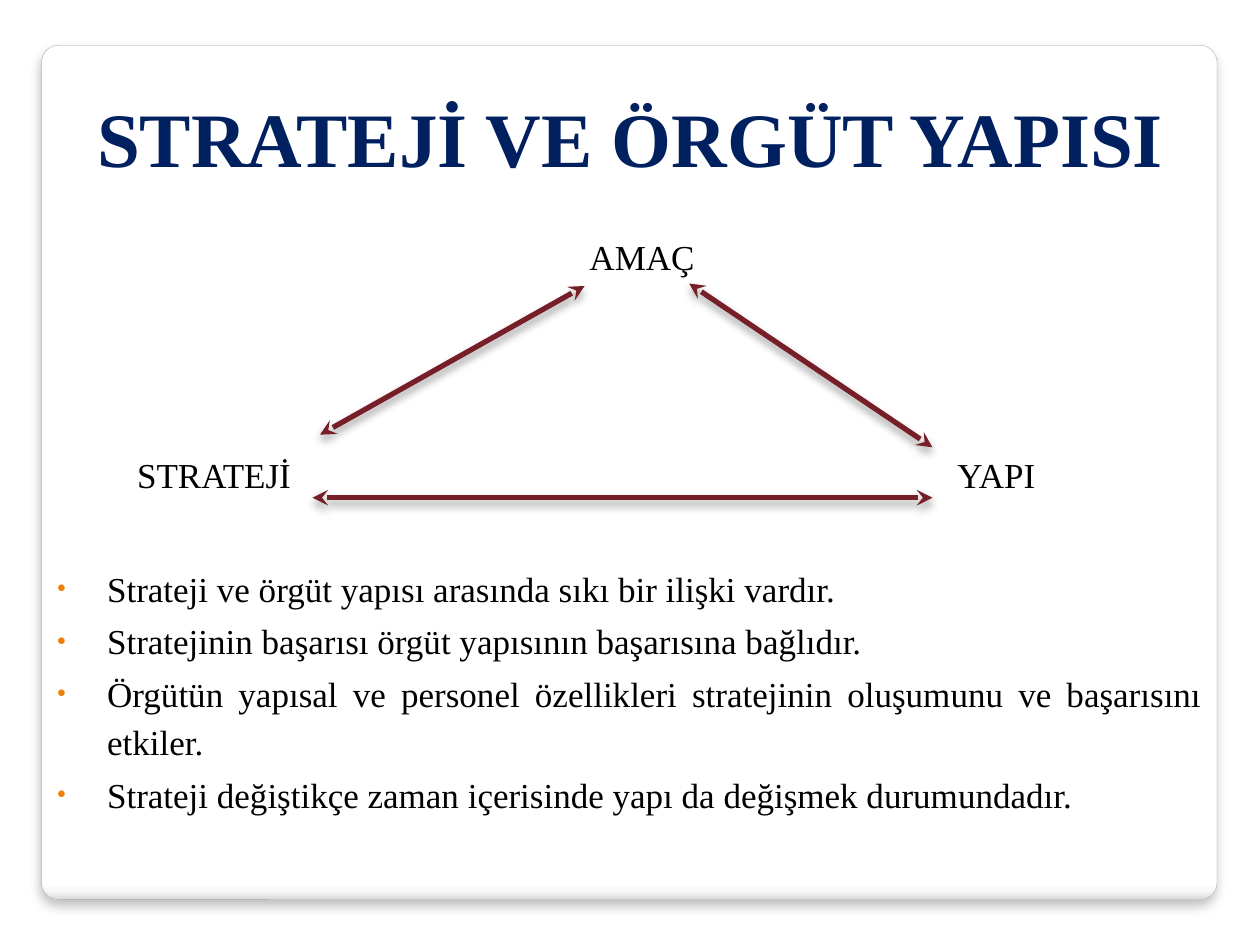
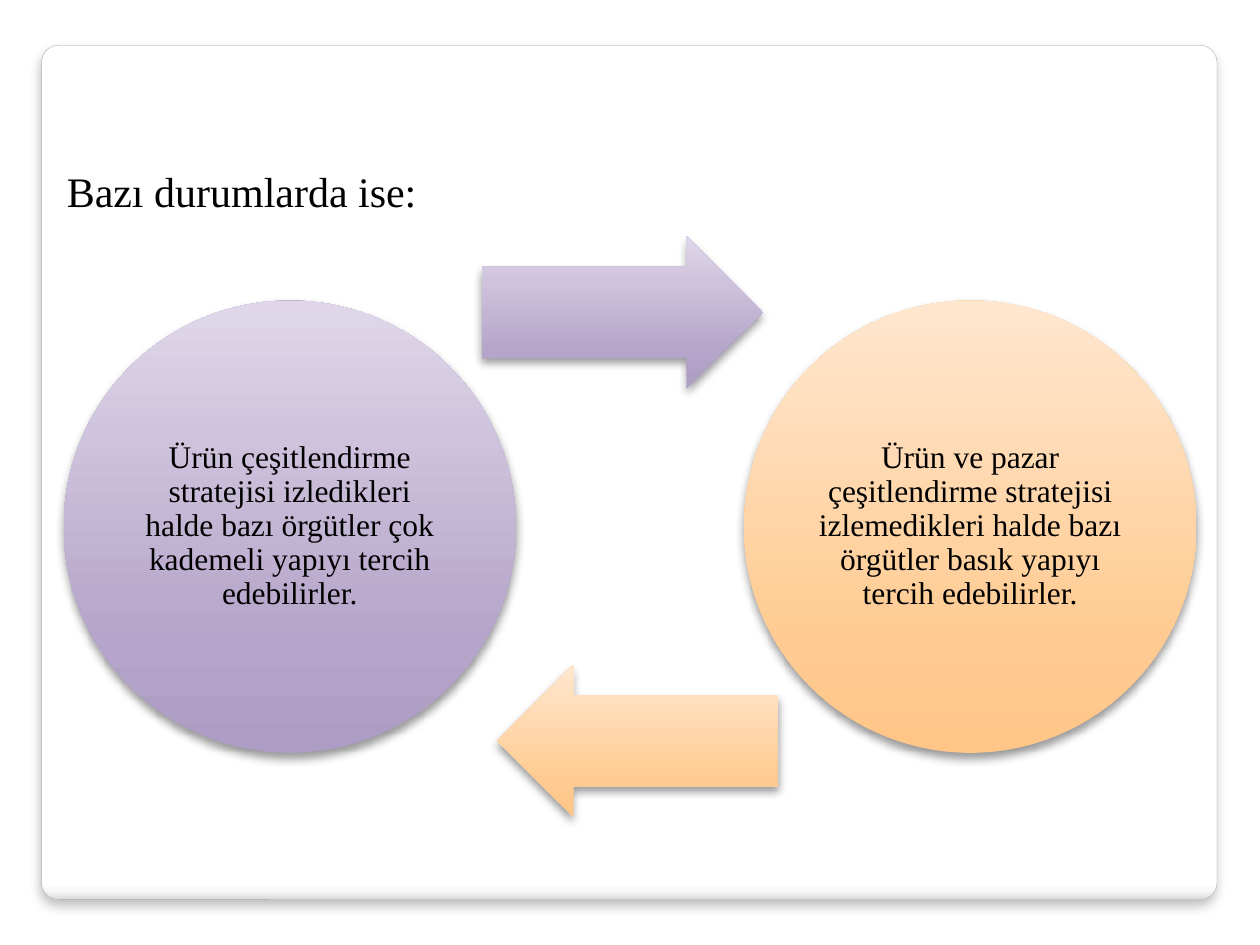
import pptx
import pptx.util
from lxml import etree
from pptx.dml.color import RGBColor
from pptx.enum.shapes import MSO_CONNECTOR, MSO_SHAPE
from pptx.enum.text import MSO_ANCHOR, MSO_AUTO_SIZE, PP_ALIGN
from pptx.oxml.ns import qn
from pptx.util import Inches, Pt

FONT = "Times New Roman"
COLORS = {"title": "002060", "text": "000000", "bullet": "F07F09",
          "arrow": "771F28", "border": "A4A4A4", "shadow": "000000"}
GRADIENTS = {
    "card": [(0, "FFFFFF"), (98, "FFFFFF"), (99, "F7F7F7"), (100, "DADADA")],
    "purple": [(0, "AD9CC3"), (25, "B5A5CA"), (100, "DFD7E9")],
    "orange": [(0, "FFC687"), (25, "FFCB92"), (100, "FFE7CF")],
}
CARD_SHADOW = (25, 6, 4)
SHAPE_SHADOW = (40, 5.2, 3)

CORNERS = [("AMAÇ", 4.58, 1.82, 1.05),
           ("STRATEJİ", 0.99, 3.55, 1.53),
           ("YAPI", 7.5, 3.55, 0.89)]
EDGES = [((2.48, 3.95), (7.4, 3.95)),
         ((2.54, 3.45), (4.64, 2.27)),
         ((7.4, 3.55), (5.47, 2.25))]
POINTS = [
    "Strateji ve örgüt yapısı arasında sıkı bir ilişki vardır.",
    "Stratejinin başarısı örgüt yapısının başarısına bağlıdır.",
    "Örgütün yapısal ve personel özellikleri stratejinin oluşumunu ve "
    "başarısını etkiler.",
    "Strateji değiştikçe zaman içerisinde yapı da değişmek durumundadır.",
]
CYCLE = [
    ("purple", "Ürün çeşitlendirme stratejisi izledikleri halde bazı örgütler "
               "çok kademeli yapıyı tercih edebilirler."),
    ("orange", "Ürün ve pazar çeşitlendirme stratejisi izlemedikleri halde "
               "bazı örgütler basık yapıyı tercih edebilirler."),
]


def child(parent, tag, **attrs):
    return etree.SubElement(parent, qn(tag), {k: str(v) for k, v in attrs.items()})


def add_shadow(effects, opacity, blur, distance):
    """Put a shadow that falls straight down into an effect list."""
    shadow = child(effects, "a:outerShdw", blurRad=int(Pt(blur)),
                   dist=int(Pt(distance)), dir=5400000, algn="ctr", rotWithShape=0)
    color = child(shadow, "a:srgbClr", val=COLORS["shadow"])
    child(color, "a:alpha", val=opacity * 1000)


def fill_gradient(sp, stops, angle):
    """Fill with (percent, colour) stops; the angle is counter-clockwise."""
    sp.fill.gradient()
    sp.fill.gradient_angle = angle
    grad = sp._element.spPr.find(qn("a:gradFill"))
    grad.set("rotWithShape", "0")
    stop_list = grad.find(qn("a:gsLst"))
    for old in list(stop_list):
        stop_list.remove(old)
    for pos, color in stops:
        child(child(stop_list, "a:gs", pos=pos * 1000), "a:srgbClr", val=color)


def add_gradient_shape(s, kind, box, gradient, angle, shadow):
    sp = s.shapes.add_shape(kind, *map(Inches, box))
    fill_gradient(sp, GRADIENTS[gradient], angle)
    sp.line.fill.background()
    sp.shadow.inherit = False
    add_shadow(sp._element.spPr.find(qn("a:effectLst")), *shadow)
    return sp


def add_card(s):
    """Lay the rounded panel behind everything else on the slide."""
    sp = add_gradient_shape(s, MSO_SHAPE.ROUNDED_RECTANGLE, (0.33, 0.36, 9.33, 6.78),
                            "card", 270, CARD_SHADOW)
    sp.adjustments[0] = 0.02
    sp.line.color.rgb = RGBColor.from_string(COLORS["border"])
    sp.line.width = Pt(0.16)
    s.shapes._spTree.insert(2, sp._element)


def style(p, size, color="text", bold=False, align=PP_ALIGN.LEFT):
    p.alignment = align
    p.font.name = FONT
    p.font.size = Pt(size)
    p.font.bold = bold
    p.font.color.rgb = RGBColor.from_string(COLORS[color])


def place(sp, box, top_inset=0.05):
    """Move a placeholder and anchor its text to the top."""
    sp.left, sp.top, sp.width, sp.height = map(Inches, box)
    tf = sp.text_frame
    tf.auto_size = MSO_AUTO_SIZE.NONE
    tf.vertical_anchor = MSO_ANCHOR.TOP
    tf.margin_top = Inches(top_inset)
    return tf


def set_title(s, text, box, top_inset, size, **look):
    tf = place(s.shapes.title, box, top_inset)
    tf.text = text
    style(tf.paragraphs[0], size, **look)


def set_bullets(sp, items, box):
    tf = place(sp, box, 0.08)
    tf.text = "\n".join(items)
    for i, p in enumerate(tf.paragraphs):
        p.line_spacing = 1.15
        p.space_before = Pt(2.5 if i else 0)
        pPr = p._p.get_or_add_pPr()
        pPr.set("marL", str(Inches(0.4)))
        pPr.set("indent", str(-Inches(0.4)))
        child(child(pPr, "a:buClr"), "a:srgbClr", val=COLORS["bullet"])
        child(pPr, "a:buSzPct", val=80000)
        child(pPr, "a:buFont", typeface=FONT)
        child(pPr, "a:buChar", char="•")
        style(p, 20, align=PP_ALIGN.JUSTIFY)


def add_label(s, text, left, top, width):
    tf = s.shapes.add_textbox(*map(Inches, (left, top, width, 0.44))).text_frame
    tf.word_wrap = False
    tf.text = text
    style(tf.paragraphs[0], 20)


def add_double_arrow(s, start, end):
    line = s.shapes.add_connector(MSO_CONNECTOR.STRAIGHT, *map(Inches, start + end))
    line.line.color.rgb = RGBColor.from_string(COLORS["arrow"])
    line.line.width = Pt(3)
    spPr = line._element.spPr
    ln = spPr.find(qn("a:ln"))
    child(ln, "a:headEnd", type="stealth")
    child(ln, "a:tailEnd", type="stealth")
    add_shadow(child(spPr, "a:effectLst"), *SHAPE_SHADOW)


def centred(x, y, width, height):
    return x - width / 2, y - height / 2, width, height


def add_circle(s, x, y, gradient, text):
    sp = add_gradient_shape(s, MSO_SHAPE.OVAL, centred(x, y, 3.59, 3.59),
                            gradient, 90, SHAPE_SHADOW)
    tf = sp.text_frame
    tf.word_wrap = True
    tf.vertical_anchor = MSO_ANCHOR.MIDDLE
    tf.margin_left = tf.margin_right = tf.margin_top = tf.margin_bottom = Inches(0.03)
    tf.text = text
    tf.paragraphs[0].line_spacing = 0.9
    style(tf.paragraphs[0], 18, align=PP_ALIGN.CENTER)


def add_block_arrow(s, x, y, gradient, rotation):
    sp = add_gradient_shape(s, MSO_SHAPE.RIGHT_ARROW, centred(x, y, 2.23, 1.21),
                            gradient, 90, SHAPE_SHADOW)
    sp.adjustments[0], sp.adjustments[1] = 0.6, 0.5
    sp.rotation = rotation


def strategy_slide(prs):
    s = prs.slides.add_slide(prs.slide_layouts[1])
    add_card(s)
    set_title(s, "STRATEJİ VE ÖRGÜT YAPISI", (0.67, 0.6, 8.83, 0.71), 0.12, 44,
              color="title", bold=True)
    set_bullets(s.placeholders[1], POINTS, (0.35, 4.37, 9.29, 2.14))
    for corner in CORNERS:
        add_label(s, *corner)
    for start, end in EDGES:
        add_double_arrow(s, start, end)


def cycle_slide(prs):
    s = prs.slides.add_slide(prs.slide_layouts[5])
    add_card(s)
    set_title(s, "Bazı durumlarda ise:", (0.43, 1.19, 3.53, 0.51), 0.12, 24)
    mid_x, mid_y = 5, 4.18
    for side, rotation, (gradient, text) in zip((-1, 1), (0, 180), CYCLE):
        add_circle(s, mid_x + side * 2.7, mid_y, gradient, text)
        add_block_arrow(s, mid_x + side * 0.06, mid_y + side * 1.7, gradient, rotation)


def main():
    prs = pptx.Presentation()
    prs.slide_width, prs.slide_height = Inches(10), Inches(7.5)
    strategy_slide(prs)
    cycle_slide(prs)
    prs.save("out.pptx")


if __name__ == "__main__":
    main()
